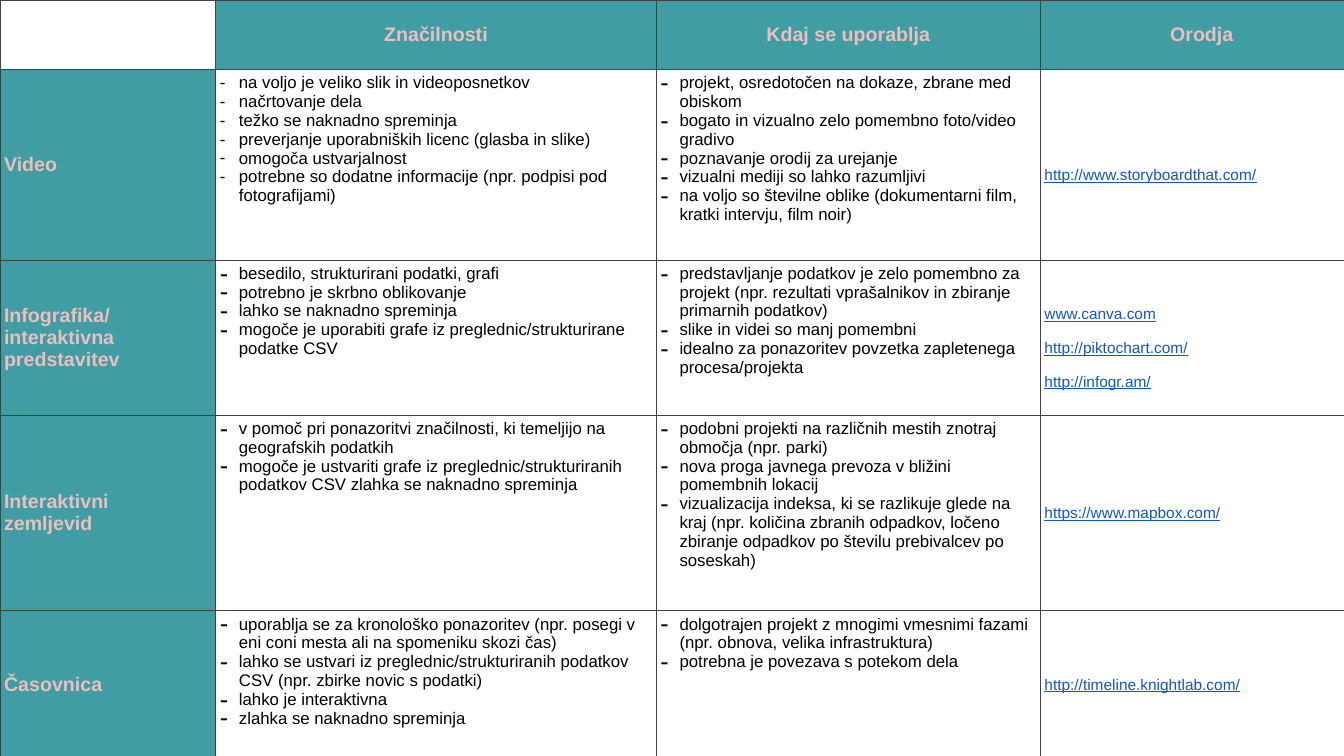
import pptx
import pptx.dml.color
import pptx.enum.text
import pptx.oxml
import pptx.oxml.ns
import pptx.util

# Grid of the table, in inches
COLUMNS = [2.14, 4.37, 3.81, 3.2]
ROWS = [0.69, 1.89, 1.54, 1.94, 1.47]
INSET = 0.04
LINK_OFFSET = 0.18
INDENT = 0.19

TEAL, PINK, WHITE, BLACK = "419DA4", "ECBEBD", "FFFFFF", "000000"
BORDER, LINK = "434343", "1155CC"

HEADINGS = ["Značilnosti", "Kdaj se uporablja", "Orodja"]

# Format name, features, uses, tools
FORMATS = [
    ("Video",
     ["na voljo je veliko slik in videoposnetkov",
      "načrtovanje dela",
      "težko se naknadno spreminja",
      "preverjanje uporabniških licenc (glasba in slike)",
      "omogoča ustvarjalnost",
      "potrebne so dodatne informacije (npr. podpisi pod fotografijami)"],
     ["projekt, osredotočen na dokaze, zbrane med obiskom",
      "bogato in vizualno zelo pomembno foto/video gradivo",
      "poznavanje orodij za urejanje",
      "vizualni mediji so lahko razumljivi",
      "na voljo so številne oblike (dokumentarni film, kratki intervju, film noir)"],
     ["http://www.storyboardthat.com/"]),
    ("Infografika/\ninteraktivna\npredstavitev",
     ["besedilo, strukturirani podatki, grafi",
      "potrebno je skrbno oblikovanje",
      "lahko se naknadno spreminja",
      "mogoče je uporabiti grafe iz preglednic/strukturirane podatke CSV"],
     ["predstavljanje podatkov je zelo pomembno za projekt "
      "(npr. rezultati vprašalnikov in zbiranje primarnih podatkov)",
      "slike in videi so manj pomembni",
      "idealno za ponazoritev povzetka zapletenega procesa/projekta"],
     ["www.canva.com", "http://piktochart.com/", "http://infogr.am/"]),
    ("Interaktivni\nzemljevid",
     ["v pomoč pri ponazoritvi značilnosti, ki temeljijo na geografskih podatkih",
      "mogoče je ustvariti grafe iz preglednic/strukturiranih podatkov CSV "
      "zlahka se naknadno spreminja"],
     ["podobni projekti na različnih mestih znotraj območja (npr. parki)",
      "nova proga javnega prevoza v bližini pomembnih lokacij",
      "vizualizacija indeksa, ki se razlikuje glede na kraj (npr. količina zbranih "
      "odpadkov, ločeno zbiranje odpadkov po številu prebivalcev po soseskah)"],
     ["https://www.mapbox.com/"]),
    ("Časovnica",
     ["uporablja se za kronološko ponazoritev "
      "(npr. posegi v eni coni mesta ali na spomeniku skozi čas)",
      "lahko se ustvari iz preglednic/strukturiranih podatkov CSV "
      "(npr. zbirke novic s podatki)",
      "lahko je interaktivna",
      "zlahka se naknadno spreminja"],
     ["dolgotrajen projekt z mnogimi vmesnimi fazami (npr. obnova, velika infrastruktura)",
      "potrebna je povezava s potekom dela"],
     ["http://timeline.knightlab.com/"]),
]


def color(value):
    return pptx.dml.color.RGBColor.from_string(value)


def add_element(parent, xml):
    namespace = pptx.oxml.ns.nsdecls("a")
    parent.append(pptx.oxml.parse_xml(xml.replace("NS", namespace, 1)))


def style_cell(cell, fill):
    """Border, fill and insets shared by all cells."""
    for side in ("lnL", "lnR", "lnT", "lnB"):
        add_element(cell._tc.get_or_add_tcPr(),
                    f'<a:{side} NS w="9525"><a:solidFill><a:srgbClr val="{BORDER}"/>'
                    f'</a:solidFill></a:{side}>')
    cell.fill.solid()
    cell.fill.fore_color.rgb = color(fill)
    inset = pptx.util.Inches(INSET)
    cell.margin_left = cell.margin_right = inset
    cell.margin_top = cell.margin_bottom = inset


def write(cell, text, size, text_color, bold=False, underline=False):
    cell.text_frame.text = text
    for paragraph in cell.text_frame.paragraphs:
        for run in paragraph.runs:
            run.font.name = "Arial"
            run.font.size = pptx.util.Pt(size)
            run.font.color.rgb = color(text_color)
            run.font.bold = bold
            run.font.underline = underline


def fill_heading(cell, text, centered=False):
    style_cell(cell, TEAL)
    cell.vertical_anchor = pptx.enum.text.MSO_ANCHOR.MIDDLE
    write(cell, text, 14, PINK, bold=True)
    if centered:
        cell.text_frame.paragraphs[0].alignment = pptx.enum.text.PP_ALIGN.CENTER


def fill_list(cell, items, bullet_size):
    style_cell(cell, WHITE)
    write(cell, "\n".join(items), 12, BLACK)
    indent = pptx.util.Inches(INDENT)
    for paragraph in cell.text_frame.paragraphs:
        properties = paragraph._p.get_or_add_pPr()
        properties.set("marL", str(indent))
        properties.set("indent", str(-indent))
        add_element(properties, f'<a:buSzPct NS val="{bullet_size * 1000}"/>')
        add_element(properties, '<a:buFont NS typeface="Arial"/>')
        add_element(properties, '<a:buChar NS char="-"/>')


def fill_links(cell, links, lowered):
    style_cell(cell, WHITE)
    cell.vertical_anchor = pptx.enum.text.MSO_ANCHOR.MIDDLE
    write(cell, "\n".join(links), 11, LINK, underline=True)
    if lowered:
        cell.margin_top = pptx.util.Inches(INSET + LINK_OFFSET)
        for paragraph in cell.text_frame.paragraphs:
            paragraph.line_spacing = 1.15
    for paragraph in cell.text_frame.paragraphs[1:]:
        paragraph.space_before = pptx.util.Pt(10)
    if len(links) > 1:
        cell.text_frame.paragraphs[-1].space_after = pptx.util.Pt(10)


def add_grid(slide):
    frame = slide.shapes.add_table(
        len(ROWS), len(COLUMNS), 0, 0,
        pptx.util.Inches(sum(COLUMNS)), pptx.util.Inches(sum(ROWS)))
    table = frame.table
    table.first_row = table.horz_banding = False
    for column, width in zip(table.columns, COLUMNS):
        column.width = pptx.util.Inches(width)
    for row, height in zip(table.rows, ROWS):
        row.height = pptx.util.Inches(height)
    return table


def main():
    presentation = pptx.Presentation()
    presentation.slide_width = pptx.util.Inches(13.33)
    presentation.slide_height = pptx.util.Inches(7.5)
    slide = presentation.slides.add_slide(presentation.slide_layouts[6])
    table = add_grid(slide)

    # Header row
    style_cell(table.cell(0, 0), WHITE)
    for column, heading in enumerate(HEADINGS, 1):
        fill_heading(table.cell(0, column), heading, centered=True)

    # One row per format
    for row, (name, features, uses, tools) in enumerate(FORMATS, 1):
        fill_heading(table.cell(row, 0), name)
        fill_list(table.cell(row, 1), features, 100 if row == 1 else 150)
        fill_list(table.cell(row, 2), uses, 150)
        fill_links(table.cell(row, 3), tools, lowered=row <= 2)

    presentation.save("out.pptx")


if __name__ == "__main__":
    main()
